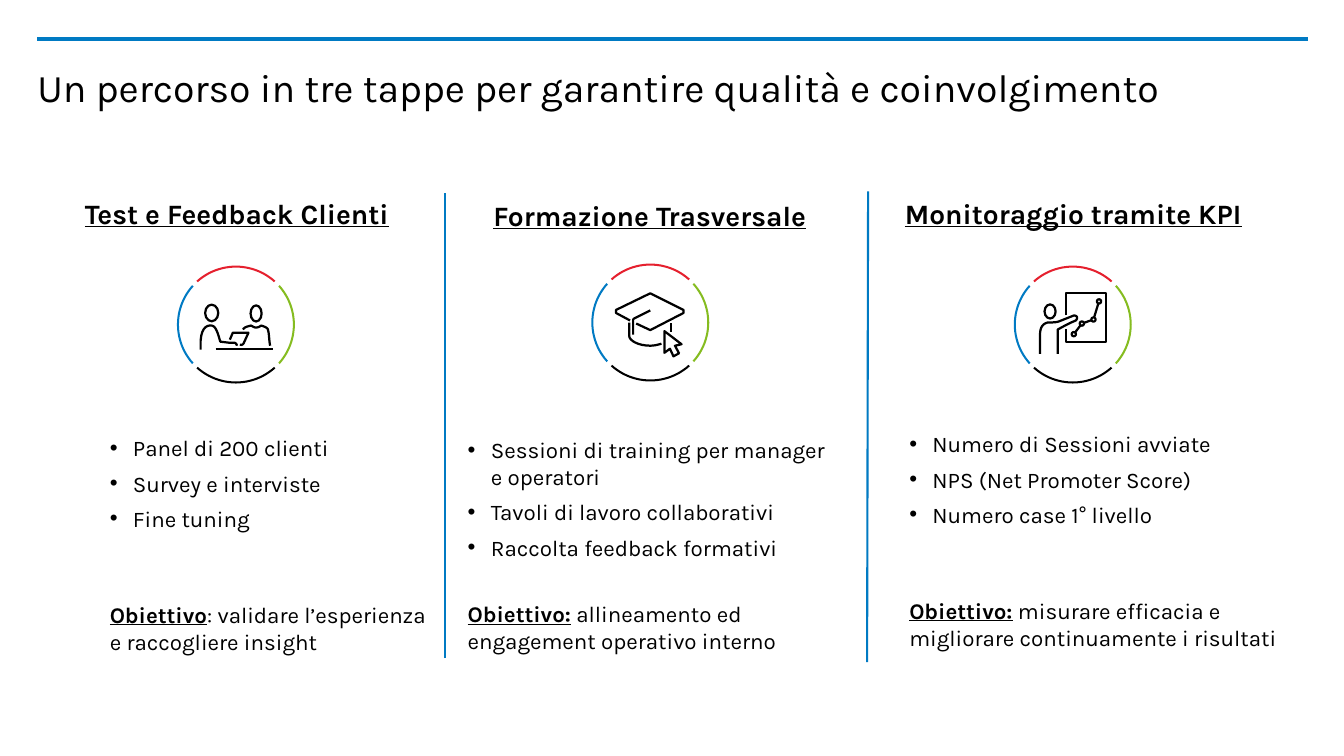
from dataclasses import dataclass
from math import cos, radians, sin

from lxml.etree import SubElement
from pptx import Presentation
from pptx.dml.color import RGBColor
from pptx.enum.shapes import MSO_CONNECTOR as Conn, MSO_SHAPE as Shape
from pptx.enum.text import MSO_ANCHOR as Anchor, MSO_AUTO_SIZE as Fit, PP_ALIGN as Align
from pptx.oxml.ns import qn
from pptx.util import Inches, Pt


@dataclass(frozen=True)
class Theme:
    font: str = "Karla"
    ink: str = "000000"
    paper: str = "FFFFFF"
    blue: str = "007AC3"
    red: str = "E5202E"
    green: str = "85BC20"
    title: float = 28
    heading: float = 20
    body: float = 16
    rule: float = 3
    divider: float = 1.5
    stroke: float = 1.6


@dataclass(frozen=True)
class Icon:
    center: tuple
    strokes: tuple
    outlines: tuple = ()
    ovals: tuple = ()


@dataclass(frozen=True)
class Stage:
    heading: str
    heading_box: tuple
    bullets: tuple
    goal_label: str
    goal: str
    body_box: tuple
    goal_gap: float
    icon: Icon
    right_inset: float = 0.1


CLIENTS = Icon(
    (2.34, 3.22),
    strokes=(
        [(-20, 24), (37, 24)],
        [(-6, 15), (-3, 8), (12.5, 8), (8, 18), (7, 20, 6, 20.5, 4, 20)],
        [(-35, 25), (-35, 16), (-34, 1, -27, 1, -25, 1), (-21, 1, -19, 4, -15.5, 17),
         (-7, 18), (-2, 18), (0, 18, 1, 20, 1, 21)],
        [(7, 5), (9, 2, 12, 2, 15, 1), (17, 2, 18, 3, 20, 3), (22, 3, 24, 2, 25, 1),
         (28, 2, 32, 3, 32, 6), (33, 9, 33, 17, 34, 21)],
    ),
    ovals=((20, -11, 11, 16), (-24, -11.5, 13, 16.5)),
)
TRAINING = Icon(
    (6.45, 3.2),
    strokes=(
        [(20.5, 0.5), (20.5, 9.5)],
        [(-21, 0), (-21, 13), (-21, 18, -12, 23, 0, 23), (4, 23, 8, 22, 11, 21)],
        [(-20, -2), (-34, -9.5), (-34, -12.5), (0, -29), (33, -12.5), (33, -9.5),
         (0, 7.5), (-14, 1)],
        [(-17, 12), (-17, -3), (-16, -4), (0, -12)],
    ),
    outlines=([(14, 8.5), (31, 21.5), (24.5, 23), (28.5, 30.5), (23, 33.5),
               (19.5, 26), (14, 30)],),
)
KPI_DOTS = [(1, 9.5), (9, -1), (20.5, -5), (26, -23)]
KPI = Icon(
    (10.64, 3.22),
    strokes=(
        [(-6.5, -9), (-6.5, -31), (33, -31), (33, 17), (-6.5, 17), (-6.5, 4.5)],
        [(-15, 29), (-15, 5), (-8, 1, -2, -2, 3, -4), (5, -6, 5, -9, 1, -9),
         (-4, -7, -9, -5, -14, -3), (-17, -2, -23, -2, -25, -2),
         (-29, -1, -32.5, 2, -32.5, 10), (-32.5, 29)],
        KPI_DOTS,
    ),
    ovals=((-22.5, -13, 11, 14), *((x, y, 4.2, 4.2) for x, y in KPI_DOTS)),
)

STAGES = (
    Stage("Test e Feedback Clienti", (0.71, 1.9, 3.28, 0.44),
          ("Panel di 200 clienti", "Survey e interviste", "Fine tuning"),
          "Obiettivo", ": validare l’esperienza e raccogliere insight",
          (0.99, 4.26, 3.41, 2.31), 43.3, CLIENTS),
    Stage("Formazione Trasversale", (4.62, 1.92, 3.65, 0.44),
          ("Sessioni di training per manager e operatori",
           "Tavoli di lavoro collaborativi", "Raccolta feedback formativi"),
          "Obiettivo:", " allineamento ed engagement operativo interno",
          (4.54, 4.28, 3.95, 2.32), 22.3, TRAINING, right_inset=0.25),
    Stage("Monitoraggio tramite KPI", (8.7, 1.9, 3.89, 0.44),
          ("Numero di Sessioni avviate", "NPS (Net Promoter Score)",
           "Numero case 1° livello"),
          "Obiettivo:", " misurare efficacia e migliorare continuamente i risultati",
          (8.92, 4.22, 4.04, 2.31), 43.3, KPI),
)


def trace(steps, samples=8):
    points = [steps[0]]
    for step in steps[1:]:
        if len(step) == 2:
            points.append(step)
            continue
        x0, y0 = points[-1]
        x1, y1, x2, y2, x3, y3 = step
        for i in range(1, samples + 1):
            t = i / samples
            a, b, c, d = (1 - t) ** 3, 3 * t * (1 - t) ** 2, 3 * t * t * (1 - t), t ** 3
            points.append((a * x0 + b * x1 + c * x2 + d * x3,
                           a * y0 + b * y1 + c * y2 + d * y3))
    return points


def band(middle, half, inner=56.5, outer=58.5, samples=24):
    angles = [radians(middle - half + 2 * half * i / samples) for i in range(samples + 1)]
    return ([(outer * cos(a), outer * sin(a)) for a in angles]
            + [(inner * cos(a), inner * sin(a)) for a in reversed(angles)])


class Deck:
    def __init__(self, theme):
        self.theme = theme
        self.prs = Presentation()
        self.prs.slide_width, self.prs.slide_height = Inches(13.33), Inches(7.5)
        self.slide = self.prs.slides.add_slide(self.prs.slide_layouts[5])
        self.shapes = self.slide.shapes

    def style(self, r, size, strong=False):
        r.font.name, r.font.size = self.theme.font, Pt(size)
        r.font.bold = r.font.underline = strong
        r.font.color.rgb = RGBColor.from_string(self.theme.ink)

    def title(self, text, box):
        sp = self.shapes.title
        sp.left, sp.top, sp.width, sp.height = map(Inches, box)
        tf = sp.text_frame
        tf.text = text
        tf.auto_size, tf.vertical_anchor = Fit.NONE, Anchor.TOP
        tf.paragraphs[0].alignment = Align.LEFT
        self.style(tf.paragraphs[0].runs[0], self.theme.title)

    def text_box(self, box):
        tf = self.shapes.add_textbox(*map(Inches, box)).text_frame
        tf.word_wrap, tf.auto_size = True, Fit.SHAPE_TO_FIT_TEXT
        return tf

    def heading(self, text, box):
        tf = self.text_box(box)
        tf.text = text
        tf.paragraphs[0].alignment = Align.CENTER
        self.style(tf.paragraphs[0].runs[0], self.theme.heading, True)

    def body(self, stage):
        tf = self.text_box(stage.body_box)
        tf.margin_right = Inches(stage.right_inset)
        tf.text = "\n".join(stage.bullets)
        for p in tf.paragraphs:
            pPr = p._p.get_or_add_pPr()
            pPr.set("marL", str(Inches(0.23)))
            pPr.set("indent", str(-Inches(0.23)))
            SubElement(pPr, qn("a:buFont")).set("typeface", "Arial")
            SubElement(pPr, qn("a:buChar")).set("char", "•")
            p.space_after = Pt(6)
            self.style(p.runs[0], self.theme.body)
        p = tf.add_paragraph()
        p.space_before, p.space_after = Pt(stage.goal_gap), Pt(6)
        for text, strong in ((stage.goal_label, True), (stage.goal, False)):
            r = p.add_run()
            r.text = text
            self.style(r, self.theme.body, strong)

    def line(self, start, end, width):
        sp = self.shapes.add_connector(Conn.STRAIGHT, *map(Inches, start + end))
        sp.line.width = Pt(width)
        sp.line.color.rgb = RGBColor.from_string(self.theme.blue)
        SubElement(sp._element.spPr, qn("a:effectLst"))

    def paint(self, sp, line=None, fill=None):
        sp.shadow.inherit = False
        sp.line.width = Pt(self.theme.stroke)
        for part, color in ((sp.line.fill, line), (sp.fill, fill)):
            if color:
                part.solid()
                part.fore_color.rgb = RGBColor.from_string(color)
            else:
                part.background()

    def path_shape(self, center, steps, close=False):
        points = [tuple(Inches(c + v / 100) for c, v in zip(center, point))
                  for point in trace(steps)]
        fb = self.shapes.build_freeform(*points[0])
        fb.add_line_segments(points[1:], close=close)
        return fb.convert_to_shape()

    def icon(self, icon):
        t = self.theme
        for steps in icon.strokes:
            self.paint(self.path_shape(icon.center, steps), line=t.ink)
        for steps in icon.outlines:
            self.paint(self.path_shape(icon.center, steps, True), line=t.ink)
        cx, cy = icon.center
        for x, y, w, h in icon.ovals:
            box = (cx + (x - w / 2) / 100, cy + (y - h / 2) / 100, w / 100, h / 100)
            sp = self.shapes.add_shape(Shape.OVAL, *map(Inches, box))
            self.paint(sp, line=t.ink, fill=t.paper)
        for middle, color in ((0, t.green), (90, t.ink), (270, t.red), (180, t.blue)):
            self.paint(self.path_shape(icon.center, band(middle, 42), True), fill=color)


def main():
    theme = Theme()
    deck = Deck(theme)
    deck.line((12.97, 0.39), (0.37, 0.39), theme.rule)
    deck.title("Un percorso in tre tappe per garantire qualità e coinvolgimento",
               (0.27, 0.58, 12.7, 1))
    for stage in STAGES:
        deck.heading(stage.heading, stage.heading_box)
        deck.body(stage)
        deck.icon(stage.icon)
    deck.line((4.41, 6.53), (4.41, 1.91), theme.divider)
    deck.line((8.6, 6.57), (8.61, 1.9), theme.divider)
    deck.prs.save("out.pptx")


if __name__ == "__main__":
    main()
